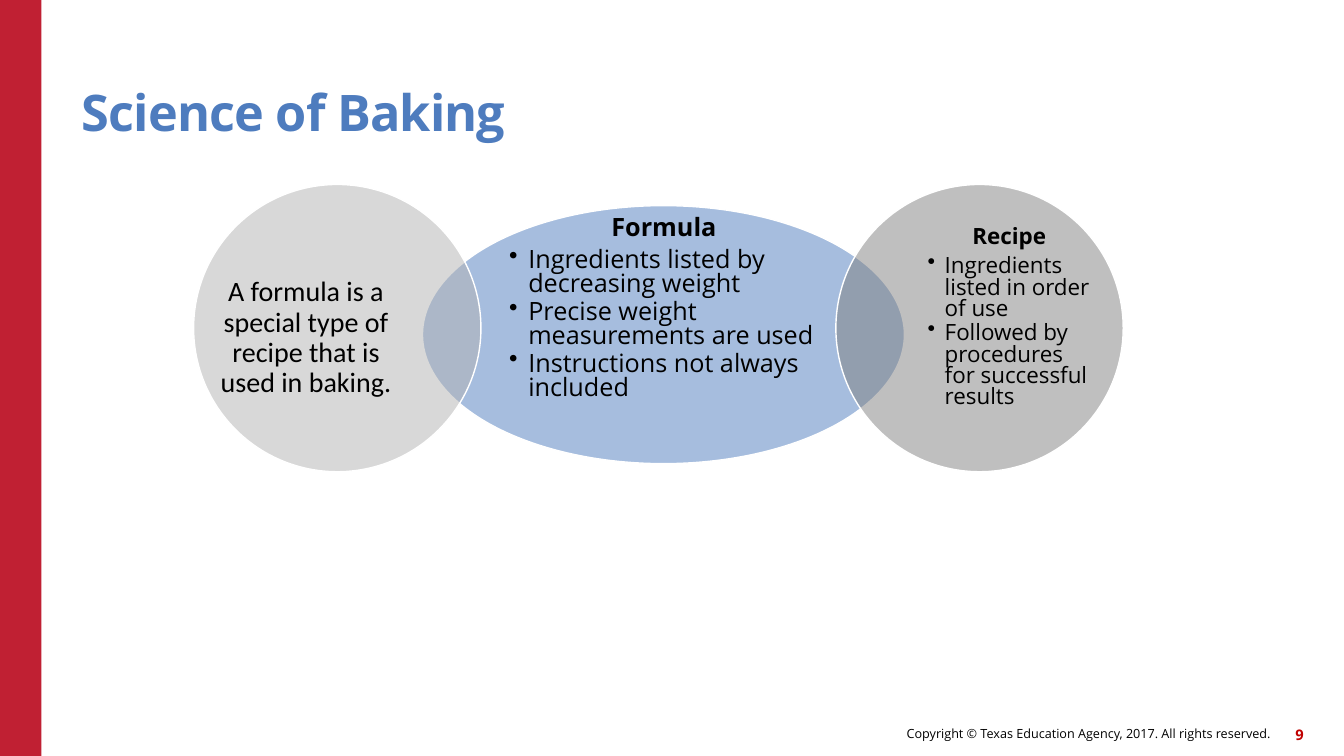
from dataclasses import dataclass

import lxml.etree
import pptx
import pptx.dml.color
import pptx.enum.shapes
import pptx.enum.text
import pptx.oxml.ns
import pptx.util

Inches = pptx.util.Inches
Align = pptx.enum.text.PP_ALIGN
Anchor = pptx.enum.text.MSO_ANCHOR


@dataclass(frozen=True)
class Theme:
    heading_font: str = "Open Sans"
    body_font: str = "Calibri"
    accent: str = "4E7CBE"
    bar: str = "C02033"
    page: str = "C00000"
    text: str = "000000"
    outline: str = "FFFFFF"
    dark_grey: str = "808080"
    light_grey: str = "B3B3B3"
    title_size: float = 36
    definition_size: float = 20
    formula_size: float = 18
    recipe_size: float = 16
    page_size: float = 10.5
    footer_size: float = 9


THEME = Theme()


@dataclass(frozen=True)
class Box:
    left: float
    top: float
    width: float
    height: float

    def lengths(self) -> tuple:
        return tuple(Inches(value) for value in (self.left, self.top, self.width, self.height))


@dataclass(frozen=True)
class Style:
    size: float
    font: str = THEME.heading_font
    color: str = THEME.text
    bold: bool = False


@dataclass(frozen=True)
class Circle:
    outline: Box
    fill: str
    text_box: Box
    heading: str
    heading_style: Style
    line_spacing: float
    bullets: tuple[str, ...] = ()
    bullet_margin: float = 0


BULLET_HANGING = 0.19
DIAMETER = 2.85
CIRCLE_TOP = 1.83

CIRCLES = (
    Circle(
        Box(4.19, 2.04, 4.78, 2.56), THEME.accent, Box(4.83, 2.49, 3.51, 1.15),
        "Formula", Style(THEME.formula_size, bold=True), 0.8,
        (
            "Ingredients listed by decreasing weight",
            "Precise weight measurements are used",
            "Instructions not always included",
        ),
        0.41,
    ),
    Circle(
        Box(8.29, CIRCLE_TOP, DIAMETER, DIAMETER), THEME.dark_grey, Box(9.2, 2.37, 1.62, 1.57),
        "Recipe", Style(THEME.recipe_size, bold=True), 0.79,
        (
            "Ingredients listed in order of use",
            "Followed by procedures for successful results",
        ),
        0.17,
    ),
    Circle(
        Box(1.92, CIRCLE_TOP, DIAMETER, DIAMETER), THEME.light_grey, Box(2.18, 2.57, 1.71, 1.57),
        "A formula is a special type of recipe that is used in baking.",
        Style(THEME.definition_size, THEME.body_font), 0.9,
    ),
)


def rgb(color: str) -> pptx.dml.color.RGBColor:
    return pptx.dml.color.RGBColor.from_string(color)


def write(paragraph, text: str, style: Style, align: Align) -> None:
    paragraph.text = text
    paragraph.alignment = align
    for run in paragraph.runs:
        run.font.name = style.font
        run.font.size = pptx.util.Pt(style.size)
        run.font.bold = style.bold
        run.font.color.rgb = rgb(style.color)


def prepare_frame(shape, anchor: Anchor):
    frame = shape.text_frame
    frame.margin_left = frame.margin_right = frame.margin_top = frame.margin_bottom = 0
    frame.word_wrap = True
    frame.auto_size = pptx.enum.text.MSO_AUTO_SIZE.NONE
    frame.vertical_anchor = anchor
    return frame


def add_text(slide, box: Box, text: str, style: Style, align: Align):
    frame = prepare_frame(slide.shapes.add_textbox(*box.lengths()), Anchor.MIDDLE)
    write(frame.paragraphs[0], text, style, align)
    return frame


def add_filled(slide, kind, box: Box, color: str):
    shape = slide.shapes.add_shape(kind, *box.lengths())
    shape.shadow.inherit = False
    shape.fill.solid()
    shape.fill.fore_color.rgb = rgb(color)
    shape.line.fill.background()
    return shape


def add_bullet(paragraph, margin: float) -> None:
    properties = paragraph._p.get_or_add_pPr()
    properties.set("marL", str(Inches(margin)))
    properties.set("indent", str(-Inches(BULLET_HANGING)))
    bullet = lxml.etree.SubElement(properties, pptx.oxml.ns.qn("a:buChar"))
    bullet.set("char", "•")


def add_circle(slide, circle: Circle) -> None:
    shape = add_filled(slide, pptx.enum.shapes.MSO_SHAPE.OVAL, circle.outline, circle.fill)
    color = shape.fill._xPr.find(".//" + pptx.oxml.ns.qn("a:srgbClr"))
    lxml.etree.SubElement(color, pptx.oxml.ns.qn("a:alpha")).set("val", "50000")
    shape.line.color.rgb = rgb(THEME.outline)
    shape.line.width = pptx.util.Pt(1)

    style = circle.heading_style
    frame = add_text(slide, circle.text_box, circle.heading, style, Align.CENTER)
    frame.paragraphs[0].line_spacing = circle.line_spacing
    if circle.bullets:
        frame.paragraphs[0].space_after = pptx.util.Pt(6)
    for text in circle.bullets:
        paragraph = frame.add_paragraph()
        add_bullet(paragraph, circle.bullet_margin)
        write(paragraph, text, Style(style.size), Align.LEFT)
        paragraph.line_spacing = circle.line_spacing
        paragraph.space_after = pptx.util.Pt(2.4)


def add_title(slide, box: Box, text: str) -> None:
    title = slide.shapes.title
    title.left, title.top, title.width, title.height = box.lengths()
    paragraph = prepare_frame(title, Anchor.BOTTOM).paragraphs[0]
    write(paragraph, text, Style(THEME.title_size, color=THEME.accent, bold=True), Align.LEFT)
    paragraph.line_spacing = 0.9
    paragraph.runs[0].font._element.set("spc", "-60")


def main() -> None:
    presentation = pptx.Presentation()
    presentation.slide_width = Inches(13.33)
    presentation.slide_height = Inches(7.5)
    slide = presentation.slides.add_slide(presentation.slide_layouts.get_by_name("Title Only"))

    add_filled(slide, pptx.enum.shapes.MSO_SHAPE.RECTANGLE, Box(0, 0, 0.41, 7.5), THEME.bar)
    add_text(
        slide, Box(6.14, 7.12, 6.46, 0.32),
        "Copyright © Texas Education Agency, 2017. All rights reserved.",
        Style(THEME.footer_size), Align.RIGHT,
    )
    add_text(
        slide, Box(12.51, 7.13, 0.42, 0.32), "9",
        Style(THEME.page_size, color=THEME.page, bold=True), Align.RIGHT,
    )
    add_title(slide, Box(0.81, 0.45, 11, 0.96), "Science of Baking")
    for circle in CIRCLES:
        add_circle(slide, circle)
    presentation.save("out.pptx")


if __name__ == "__main__":
    main()
